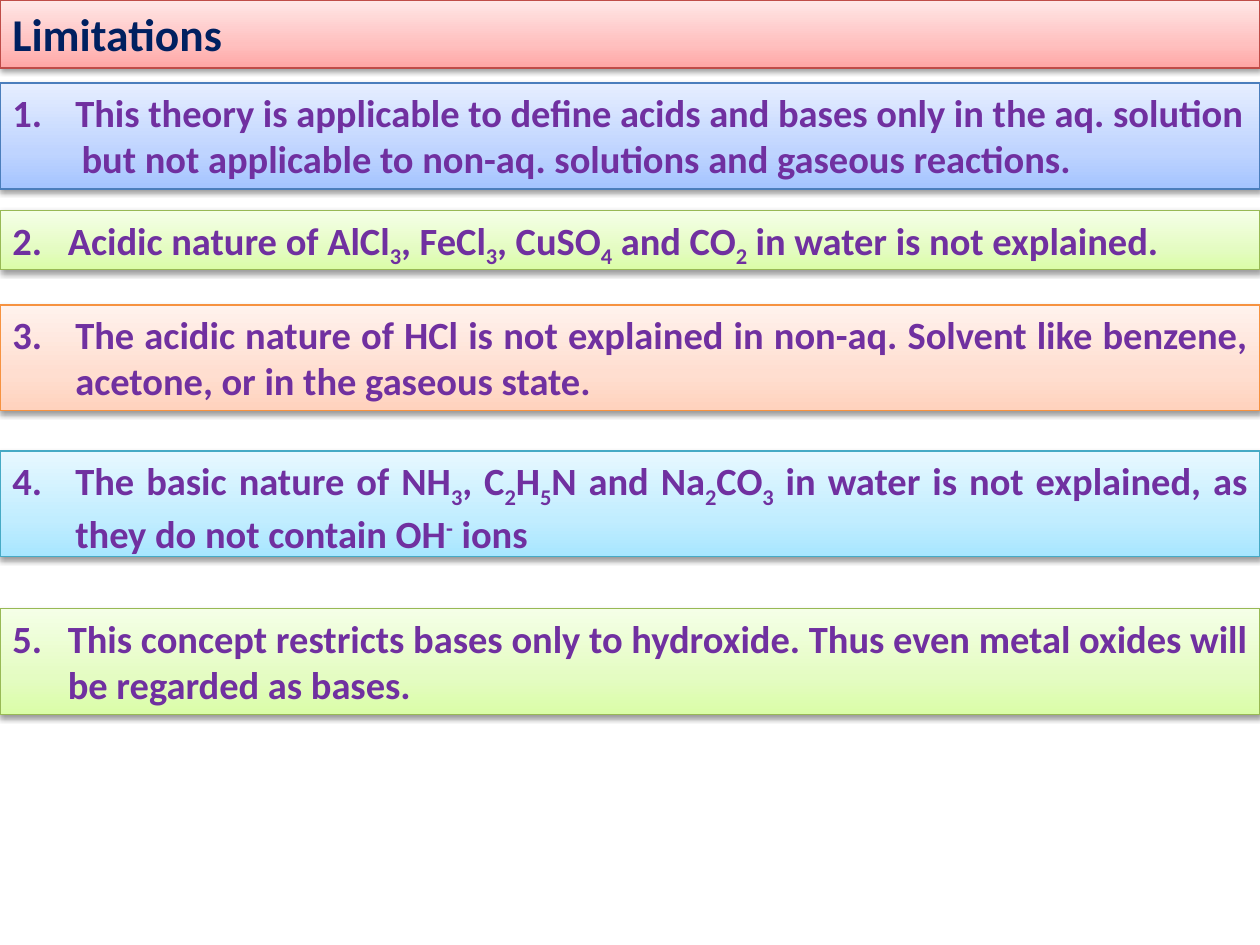
import pptx
import pptx.dml.color
import pptx.enum.shapes
import pptx.enum.text
import pptx.oxml
import pptx.oxml.ns
import pptx.util
from lxml import etree
from copy import deepcopy

Inches, Pt = pptx.util.Inches, pptx.util.Pt
qn = pptx.oxml.ns.qn
ALIGN = pptx.enum.text.PP_ALIGN

WIDTH, HEIGHT = 10, 7.5
ONE_LINE, TWO_LINES = 0.47, 0.84
TITLE_FONT = {"name": "Calibri", "size": Pt(26), "bold": True}
ITEM_FONT = {"name": "Calibri", "size": Pt(22), "bold": True}
TITLE_COLOUR, ITEM_COLOUR = "002060", "7030A0"
BASELINES = {"_": "-25000", "^": "30000"}
STOP_POSITIONS = (0, 0.35, 1)

# Gradient from bottom to top, then the outline
PALETTES = {
    "red": ("FFA6A5", "FFC0BF", "FFE7E7", "BF4C48"),
    "blue": ("A4C4FF", "BFD4FF", "E6EEFF", "4B7EBC"),
    "green": ("DAFDA7", "E4FCC2", "F5FFE7", "98B955"),
    "orange": ("FFD2BD", "FFDED0", "FFF2ED", "F69240"),
    "aqua": ("A7E6FF", "C1EDFF", "E7F8FF", "46AAC5"),
}

# Top, height, palette, hanging indent, paragraphs; "|" parts the spans,
# and a span starting with "_" or "^" is lowered or raised
LIMITATIONS = [
    (0.66, TWO_LINES, "blue", 0.5, [
        "This theory is applicable to define acids and bases only in the aq. solution",
        "but not applicable to non-aq. solutions and gaseous reactions."]),
    (1.67, ONE_LINE, "green", 0.44, [
        "Acidic nature of AlCl|_3|, FeCl|_3|, CuSO|_4| and CO|_2| in water is not explained."]),
    (2.42, TWO_LINES, "orange", 0.5, [
        "The acidic nature of HCl is not explained in non-aq. Solvent like benzene, "
        "acetone, or in the gaseous state."]),
    (3.58, TWO_LINES, "aqua", 0.5, [
        "The basic nature of NH|_3|, C|_2|H|_5|N and Na|_2|CO|_3| in water is not "
        "explained, as they do not contain OH|^-| ions"]),
    (4.83, TWO_LINES, "green", 0.44, [
        "This concept restricts bases only to hydroxide. Thus even metal oxides will "
        "be regarded as bases."]),
]


def colour(value):
    return pptx.dml.color.RGBColor.from_string(value)


def set_values(target, values):
    for name, value in values.items():
        setattr(target, name, value)


def fill_gradient(box, colours):
    box.fill.gradient()
    box.fill.gradient_angle = 90
    stop_list = box._element.spPr.find(".//" + qn("a:gsLst"))
    stop_list.append(deepcopy(stop_list[0]))
    for stop, value, position in zip(box.fill.gradient_stops, colours, STOP_POSITIONS):
        stop.color.rgb = colour(value)
        stop.position = position


def add_shadow(box):
    box.shadow.inherit = False
    effects = box._element.spPr.find(qn("a:effectLst"))
    shadow = etree.SubElement(effects, qn("a:outerShdw"), blurRad="40000",
                              dist="20000", dir="5400000", rotWithShape="0")
    black = etree.SubElement(shadow, qn("a:srgbClr"), val="000000")
    etree.SubElement(black, qn("a:alpha"), val="38000")


def add_band(page, top, height, palette):
    """Add a full-width gradient box and return its text frame."""
    box = page.shapes.add_shape(
        pptx.enum.shapes.MSO_SHAPE.RECTANGLE,
        0, Inches(top), Inches(WIDTH), Inches(height))
    *gradient, outline = PALETTES[palette]
    fill_gradient(box, gradient)
    box.line.color.rgb = colour(outline)
    box.line.width = Pt(0.75)
    add_shadow(box)
    set_values(box.text_frame, {
        "word_wrap": True,
        "vertical_anchor": pptx.enum.text.MSO_ANCHOR.TOP,
        "auto_size": pptx.enum.text.MSO_AUTO_SIZE.SHAPE_TO_FIT_TEXT,
    })
    return box.text_frame


def add_spans(para, text, font, font_colour):
    for part in text.split("|"):
        span = para.add_run()
        span.text = part.lstrip("_^")
        set_values(span.font, font)
        span.font.color.rgb = colour(font_colour)
        if part[0] in BASELINES:
            span.font._element.set("baseline", BASELINES[part[0]])


def set_indent(para, left, first=0):
    properties = para._p.get_or_add_pPr()
    properties.set("marL", str(Inches(left)))
    properties.set("indent", str(Inches(first)))
    return properties


def add_limitation(page, number, top, height, palette, hanging, texts):
    frame = add_band(page, top, height, palette)
    for index, text in enumerate(texts):
        para = frame.add_paragraph() if index else frame.paragraphs[0]
        para.alignment = ALIGN.JUSTIFY
        if index:
            set_indent(para, hanging + 0.05)
        else:
            properties = set_indent(para, hanging, -hanging)
            etree.SubElement(properties, qn("a:buAutoNum"),
                             type="arabicPeriod", startAt=str(number))
        add_spans(para, text, ITEM_FONT, ITEM_COLOUR)


def main():
    deck = pptx.Presentation()
    set_values(deck, {"slide_width": Inches(WIDTH), "slide_height": Inches(HEIGHT)})
    page = deck.slides.add_slide(deck.slide_layouts[6])
    title = add_band(page, 0, 0.54, "red").paragraphs[0]
    title.alignment = ALIGN.LEFT
    add_spans(title, "Limitations", TITLE_FONT, TITLE_COLOUR)
    for number, limitation in enumerate(LIMITATIONS, start=1):
        add_limitation(page, number, *limitation)
    deck.save("out.pptx")


if __name__ == "__main__":
    main()
